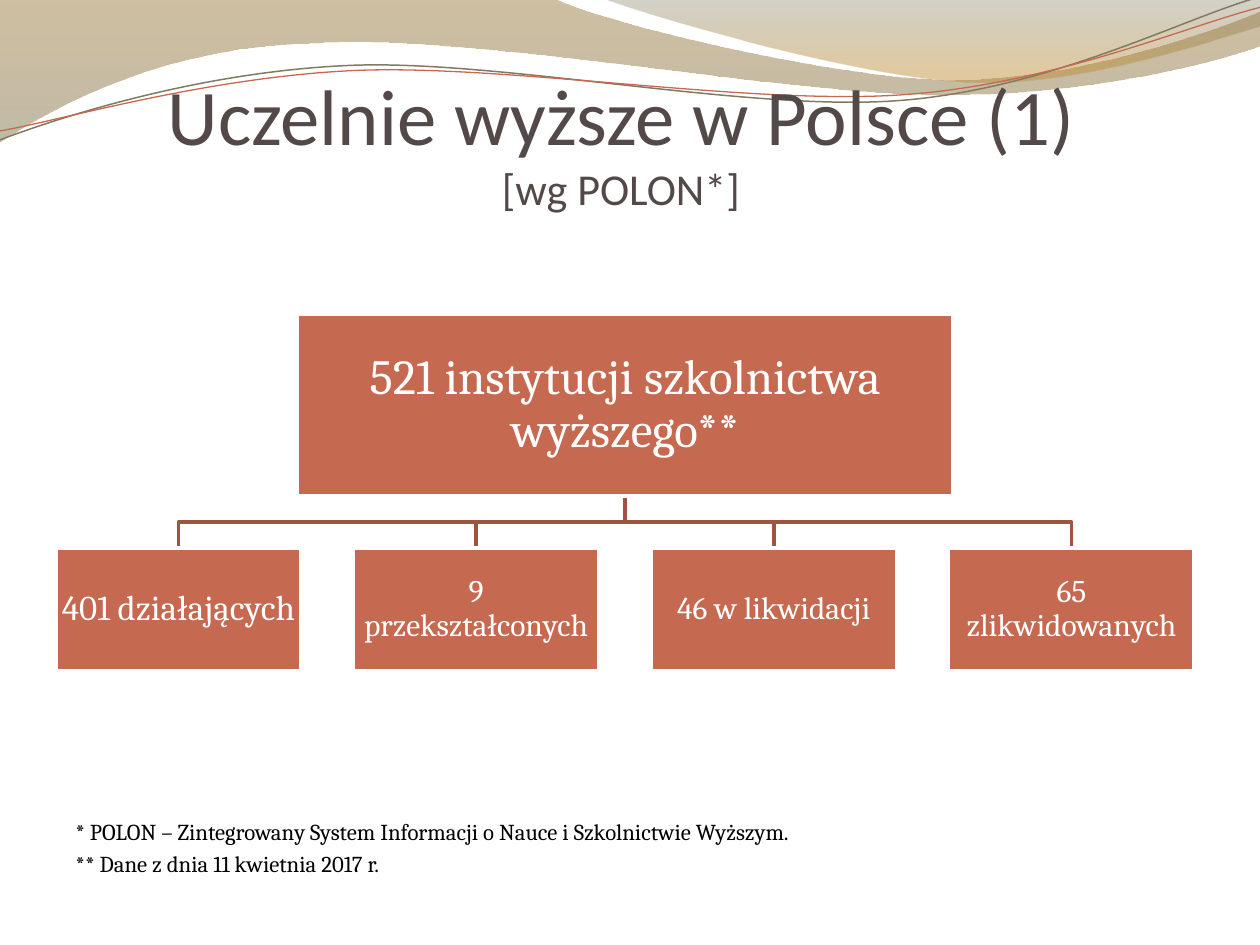
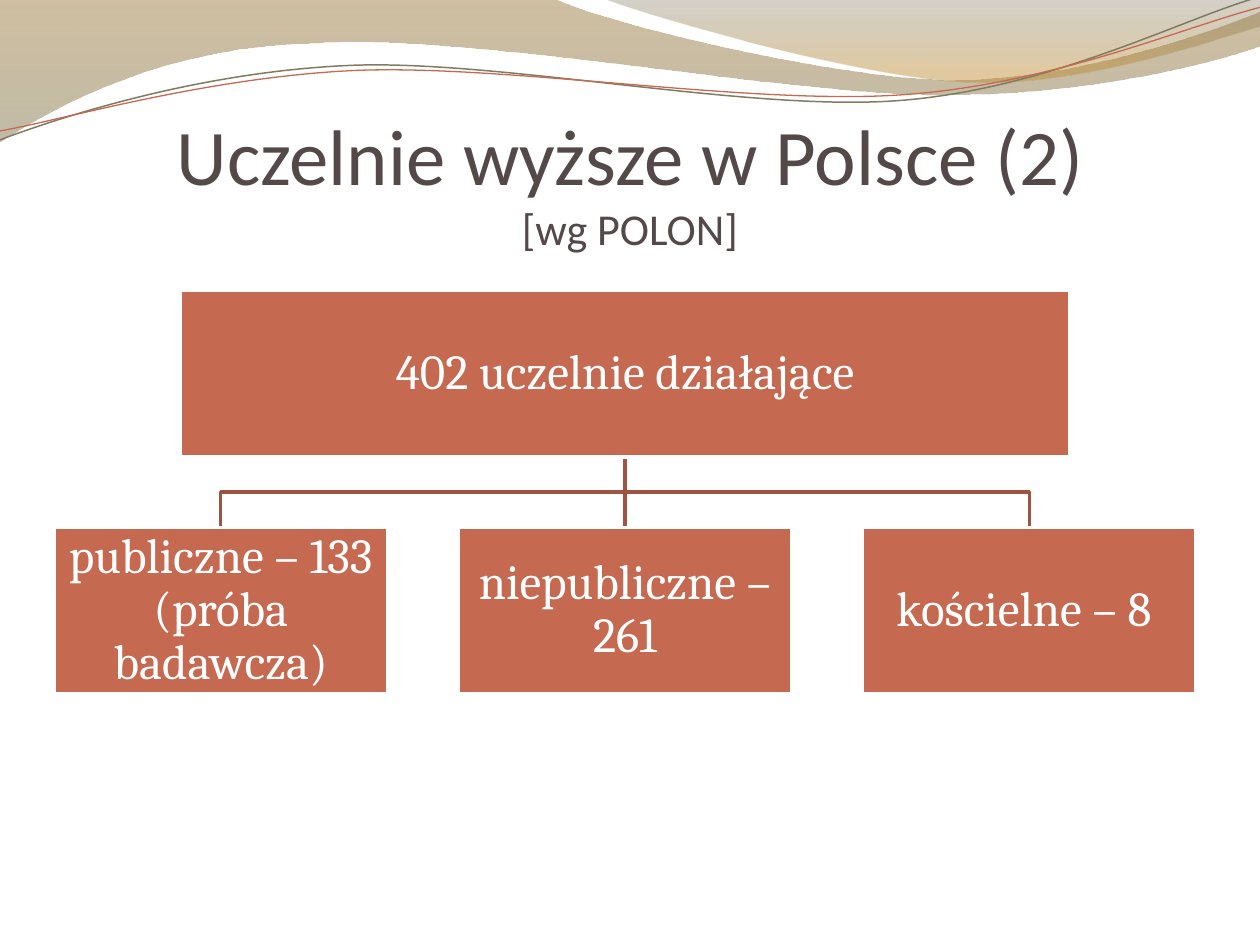
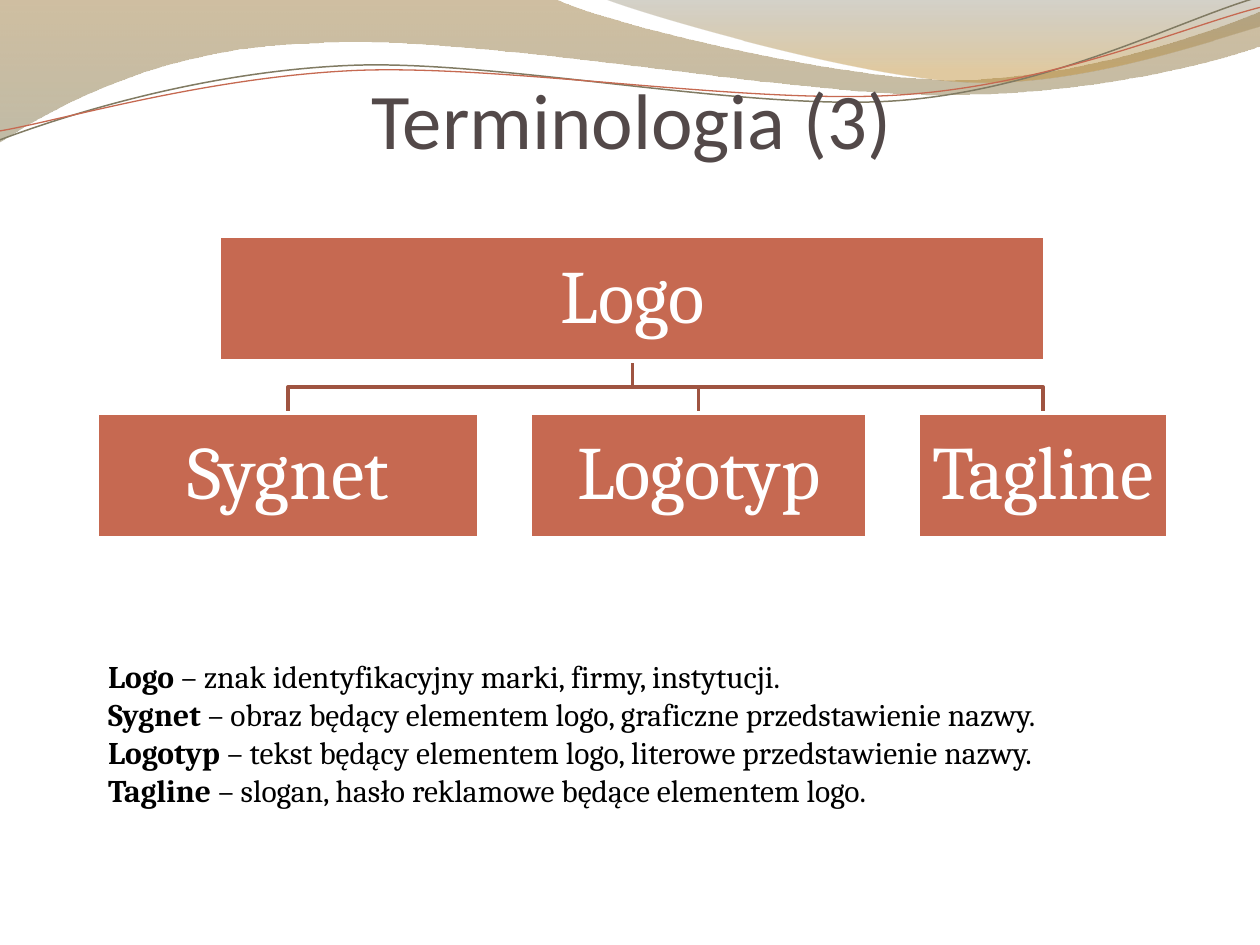
from pptx import Presentation
from pptx import util as u
from pptx.dml.color import RGBColor
from pptx.enum import shapes, text
from pptx.oxml import parse_xml
from pptx.oxml.ns import nsdecls, qn

Cm, Pt = u.Cm, u.Pt

# Shared style
TERRACOTTA = RGBColor(0xC6, 0x69, 0x51)
LINK_BROWN = RGBColor(0x9F, 0x54, 0x41)
OLIVE = RGBColor(0x81, 0x7B, 0x63)
TITLE_GREY = RGBColor(0x53, 0x49, 0x49)
WHITE = RGBColor(0xFF, 0xFF, 0xFF)
BLACK = RGBColor(0, 0, 0)
TITLE_FONT, BODY_FONT = "Calibri", "Cambria"

# Waves in cm: a start point, then lines (one point) and curves (three points)
TAN_BAND = [
    [(0, 0)], [(11.18, -0.03)],
    [(12.09, 0.43), (16.87, 1.6), (19.25, 1.6)],
    [(21.67, 1.6), (24.33, 0.66), (25.4, 0.23)],
    [(25.43, 0.91)],
    [(24.97, 1.12), (22.1, 1.93), (18.95, 1.91)],
    [(15.8, 1.91), (9.7, 0.71), (6.53, 0.86)],
    [(3.28, 0.91), (1.17, 2.11), (-0.03, 2.87)],
]
GOLD_BAND = [
    [(12.17, -0.03)],
    [(12.93, 0.28), (17.32, 1.57), (19.53, 1.65)],
    [(21.74, 1.75), (24.41, 0.81), (25.4, 0.53)],
    [(25.4, 0)],
]
OLIVE_WAVE = [
    [(0, 2.82)],
    [(1.22, 2.36), (4.01, 1.45), (7.04, 1.32)],
    [(10.03, 1.19), (15.06, 2.26), (18.11, 2.03)],
    [(21.16, 1.8), (23.83, 0.38), (25.35, -0.05)],
]
RED_WAVE = [
    [(0, 2.64)],
    [(1.19, 2.44), (4.17, 1.55), (7.19, 1.42)],
    [(10.24, 1.3), (15.16, 2.13), (18.21, 1.91)],
    [(21.23, 1.7), (23.9, 0.53), (25.4, 0.15)],
]


def add_outline(page, points, close=False):
    builder = page.shapes.build_freeform(*points[0])
    builder.add_line_segments(points[1:], close=close)
    outline = builder.convert_to_shape()
    outline.shadow.inherit = False
    return outline


def add_curved_outline(page, segments, close=False):
    """Lay all points as lines, then merge each three of a curve into a cubic."""
    points = [(Cm(x), Cm(y)) for segment in segments for x, y in segment]
    outline = add_outline(page, points, close)
    lines = iter(list(outline.element.iter(qn("a:lnTo"))))
    for segment in segments[1:]:
        parts = [next(lines) for _ in segment]
        if len(parts) == 3:
            curve = parse_xml(f'<a:cubicBezTo {nsdecls("a")}/>')
            parts[0].addprevious(curve)
            for part in parts:
                curve.append(part[0])
                part.getparent().remove(part)
    return outline


def set_line(shape, colour, width):
    shape.line.color.rgb = colour
    shape.line.width = Pt(width)


def add_band(page, segments, stops):
    """Closed wave with a downward gradient; stops are (place, colour, opacity)."""
    band = add_curved_outline(page, segments, close=True)
    band.line.fill.background()
    stop_xml = "".join(
        f'<a:gs pos="{place * 1000}"><a:srgbClr val="{colour}">'
        f'<a:alpha val="{opacity * 1000}"/></a:srgbClr></a:gs>'
        for place, colour, opacity in stops)
    band.element.spPr.insert(2, parse_xml(
        f'<a:gradFill {nsdecls("a")} rotWithShape="1"><a:gsLst>{stop_xml}</a:gsLst>'
        '<a:lin ang="5400000" scaled="0"/></a:gradFill>'))
    return band


def add_wave(page, segments, colour, width):
    wave = add_curved_outline(page, segments)
    wave.fill.background()
    set_line(wave, colour, width)
    return wave


def decorate_layout(layout, page):
    """Draw the waves once and hand them to the layout shared by all pages."""
    waves = [
        add_band(page, TAN_BAND, [(0, "967231", 45), (100, "8D835D", 55)]),
        add_band(page, GOLD_BAND, [(0, "70694F", 30), (80, "BD8B30", 45)]),
        add_wave(page, OLIVE_WAVE, OLIVE, 0.85),
        add_wave(page, RED_WAVE, TERRACOTTA, 0.75),
    ]
    for wave in waves:
        layout.shapes.element.append(wave.element)


def set_font(font, name, size, colour):
    font.name, font.size, font.color.rgb = name, Pt(size), colour


def add_text_frame(page, left, top, width, height):
    frame = page.shapes.add_textbox(Cm(left), Cm(top), Cm(width), Cm(height)).text_frame
    frame.word_wrap = True
    return frame


def add_title(page, left, top, height, title, subtitle=None):
    frame = add_text_frame(page, left, top, 22.86, height)
    frame.margin_left = frame.margin_right = frame.margin_bottom = 0
    frame.vertical_anchor = text.MSO_ANCHOR.BOTTOM
    para = frame.paragraphs[0]
    para.alignment = text.PP_ALIGN.CENTER
    set_font(para.font, TITLE_FONT, 45, TITLE_GREY)
    para.add_run().text = title
    if subtitle:
        para.add_line_break()
        span = para.add_run()
        span.text = subtitle
        span.font.size = Pt(25.2)


def add_paragraphs(frame, lines, size, alignment, space_before=0):
    """Each line is a (bold term, plain text) pair."""
    for index, (term, words) in enumerate(lines):
        para = frame.add_paragraph() if index else frame.paragraphs[0]
        para.alignment = alignment
        para.space_before = Pt(space_before)
        set_font(para.font, BODY_FONT, size, BLACK)
        if term:
            span = para.add_run()
            span.text = term
            span.font.bold = True
        para.add_run().text = words


def add_box(page, left, top, width, height, label, size):
    box = page.shapes.add_shape(shapes.MSO_SHAPE.RECTANGLE,
                                Cm(left), Cm(top), Cm(width), Cm(height))
    box.shadow.inherit = False
    box.fill.solid()
    box.fill.fore_color.rgb = TERRACOTTA
    set_line(box, WHITE, 2)
    frame = box.text_frame
    frame.word_wrap = True
    frame.margin_left = frame.margin_right = frame.margin_top = frame.margin_bottom = Cm(0.04)
    frame.vertical_anchor = text.MSO_ANCHOR.MIDDLE
    para = frame.paragraphs[0]
    para.text = label
    para.alignment = text.PP_ALIGN.CENTER
    para.line_spacing = 0.9
    set_font(para.font, BODY_FONT, size, WHITE)
    return box


def add_link(page, parent, child):
    """Join two boxes behind them: straight when aligned, else with two bends."""
    start_x, end_x = (box.left + box.width // 2 for box in (parent, child))
    start_y, end_y = parent.top + parent.height, child.top
    if abs(start_x - end_x) < Cm(0.05):
        link = page.shapes.add_connector(shapes.MSO_CONNECTOR.STRAIGHT,
                                         start_x, start_y, end_x, end_y)
        link.begin_connect(parent, 2)
        link.end_connect(child, 0)
        link.element.spPr.append(parse_xml(f'<a:effectLst {nsdecls("a")}/>'))
    else:
        middle_y = (start_y + end_y) // 2
        link = add_outline(page, [(start_x, start_y), (start_x, middle_y),
                                  (end_x, middle_y), (end_x, end_y)])
        link.fill.background()
    set_line(link, LINK_BROWN, 2)
    page.shapes.element.insert(2, link.element)


def add_tree(page, centre, top, gap, root, children, child_height):
    """Root is (label, size, width, height), each child (label, size, width)."""
    label, size, width, height = root
    root_box = add_box(page, centre - width / 2, top, width, height, label, size)
    row_width = sum(child[2] for child in children) + gap * (len(children) - 1)
    left = centre - row_width / 2
    for label, size, width in children:
        child_box = add_box(page, left, top + height + gap, width, child_height, label, size)
        add_link(page, root_box, child_box)
        left += width + gap


def main():
    deck = Presentation()
    deck.slide_width, deck.slide_height = Cm(25.4), Cm(19.05)
    blank = deck.slide_layouts[6]
    pages = [deck.slides.add_slide(blank) for _ in range(3)]
    decorate_layout(blank, pages[0])

    # Institutions by status
    page = pages[0]
    add_title(page, 1.09, 1.12, 3.2, "Uczelnie wyższe w Polsce (1)", "[wg POLON*]")
    add_tree(page, 12.6, 6.33, 1.05,
             ("521 instytucji szkolnictwa wyższego**", 28, 13.23, 3.67),
             [("401 działających", 20, 4.95), ("9 przekształconych", 18, 4.95),
              ("46 w likwidacji", 18, 4.95), ("65 zlikwidowanych", 18, 4.95)], 2.48)
    notes = add_text_frame(page, 1.27, 16.36, 22.86, 1.4)
    add_paragraphs(notes, [
        ("", "* POLON – Zintegrowany System Informacji o Nauce i Szkolnictwie Wyższym."),
        ("", "** Dane z dnia 11 kwietnia 2017 r."),
    ], 13, text.PP_ALIGN.LEFT, 2.6)

    # Active institutions by type
    page = pages[1]
    add_title(page, 1.27, 1.96, 3.17, "Uczelnie wyższe w Polsce (2)", "[wg POLON]")
    add_tree(page, 12.6, 5.86, 1.42, ("402 uczelnie działające", 28, 17.93, 3.35),
             [("publiczne – 133 (próba badawcza)", 28, 6.73),
              ("niepubliczne – 261", 28, 6.73), ("kościelne – 8 ", 28, 6.73)], 3.35)

    # Terms
    page = pages[2]
    add_title(page, 1.3, 1.33, 2, "Terminologia (3)")
    add_tree(page, 12.75, 4.77, 1.05, ("Logo", 43, 16.64, 2.51),
             [("Sygnet", 43, 7.69), ("Logotyp", 43, 6.77), ("Tagline", 43, 5.02)], 2.51)
    terms = add_text_frame(page, 1.93, 13.13, 21.59, 3.33)
    add_paragraphs(terms, [
        ("Logo ", "– znak identyfikacyjny marki, firmy, instytucji."),
        ("Sygnet ", "– obraz będący elementem logo, graficzne przedstawienie nazwy."),
        ("Logotyp ", "– tekst będący elementem logo, literowe przedstawienie nazwy."),
        ("Tagline ", "– slogan, hasło reklamowe będące elementem logo."),
    ], 18, text.PP_ALIGN.JUSTIFY)

    deck.save("out.pptx")


if __name__ == "__main__":
    main()
